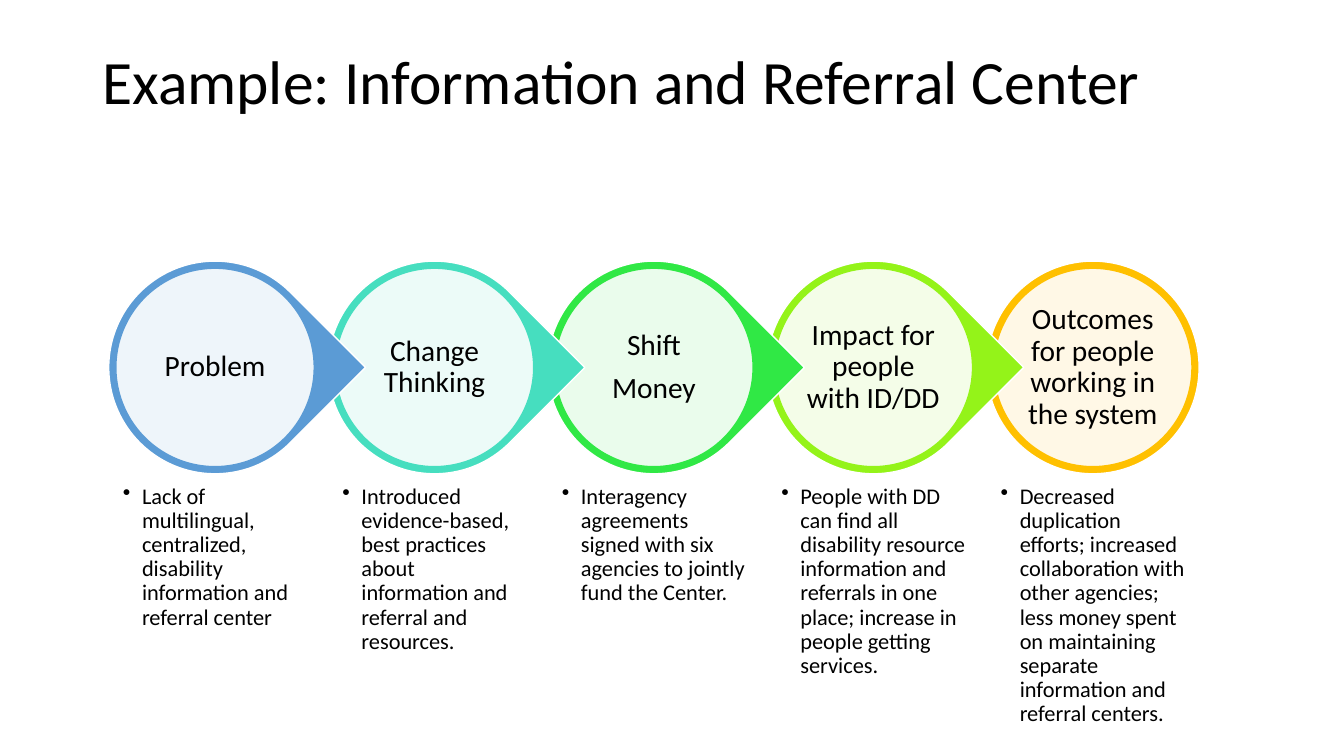
from typing import NamedTuple

from lxml import etree
from pptx import Presentation
from pptx.dml.color import RGBColor
from pptx.enum.shapes import MSO_SHAPE
from pptx.enum.text import MSO_ANCHOR, PP_ALIGN
from pptx.oxml.ns import qn
from pptx.util import Cm, Pt

DROP, OVAL = MSO_SHAPE.TEAR, MSO_SHAPE.OVAL
TOP, MID = MSO_ANCHOR.TOP, MSO_ANCHOR.MIDDLE
LEFT, CENTER = PP_ALIGN.LEFT, PP_ALIGN.CENTER

FONT = "Calibri"
COLORS = {
    "blue": "5B9BD5",
    "teal": "46DEBF",
    "green": "30E845",
    "lime": "94F319",
    "gold": "FFC000",
    "white": "FFFFFF",
    "black": "000000",
}

START, PITCH = 2.74, 5.53
RING_TOP, RING, RIM = 6.58, 5.36, 0.18
DISC = RING - 2 * RIM
LABEL_GAP = 0.89
LABEL = RING - 2 * LABEL_GAP
NOTE_TOP, NOTE_HIGH = 12.04, 2.95


class Box(NamedTuple):
    left: float
    top: float
    width: float
    height: float


class Style(NamedTuple):
    size: float
    anchor: MSO_ANCHOR
    align: PP_ALIGN = LEFT
    inset: float = 0.18
    after: float = 0


class Step(NamedTuple):
    color: str
    label: str
    note: str


TITLE = Style(44, MID, inset=0.25)
HEAD = Style(21, MID, CENTER, 0.07, 7.35)
NOTE = Style(16, TOP, after=2.4)

STEPS = [
    Step("blue", "Problem",
         "Lack of multilingual, centralized, disability information and "
         "referral center"),
    Step("teal", "Change Thinking",
         "Introduced evidence-based, best practices about information and "
         "referral and resources."),
    Step("green", "Shift\nMoney",
         "Interagency agreements signed with six agencies to jointly fund "
         "the Center."),
    Step("lime", "Impact for people with ID/DD",
         "People with DD can find all disability resource information and "
         "referrals in one place; increase in people getting services."),
    Step("gold", "Outcomes for people working in the system",
         "Decreased duplication efforts; increased collaboration with other "
         "agencies; less money spent on maintaining separate information "
         "and referral centers."),
]


def rgb(name: str) -> RGBColor:
    return RGBColor.from_string(COLORS[name])


def add_round(slide, kind: MSO_SHAPE, box: Box, fill: str, line: str):
    shape = slide.shapes.add_shape(kind, *map(Cm, box))
    shape.shadow.inherit = False
    shape.fill.solid()
    shape.fill.fore_color.rgb = rgb(fill)
    shape.line.color.rgb = rgb(line)
    shape.line.width = Pt(1)
    return shape


def fade(shape, percent: int) -> None:
    color = shape.fill._xPr.find(qn("a:solidFill"))[0]
    etree.SubElement(color, qn("a:alpha"), val=str(percent * 1000))


def add_text(slide, box: Box, text: str, style: Style):
    frame = slide.shapes.add_textbox(*map(Cm, box)).text_frame
    frame.word_wrap = True
    frame.vertical_anchor = style.anchor
    frame.margin_left = frame.margin_right = Cm(style.inset)
    frame.margin_top = frame.margin_bottom = Cm(min(style.inset, 0.18))
    frame.text = text
    for para in frame.paragraphs:
        para.alignment = style.align
        para.line_spacing = 0.9
        para.space_after = Pt(style.after)
        para.font.name = FONT
        para.font.size = Pt(style.size)
        para.font.color.rgb = rgb("black")
    return frame


def add_bullet(para) -> None:
    props = para._p.get_or_add_pPr()
    props.set("marL", str(Cm(0.48)))
    props.set("indent", str(-Cm(0.48)))
    bullet = etree.Element(qn("a:buChar"), char="•")
    props.find(qn("a:defRPr")).addprevious(bullet)


def add_step(slide, index: int, step: Step) -> None:
    left = START + index * PITCH
    last = index == len(STEPS) - 1
    ring = add_round(slide, OVAL if last else DROP,
                     Box(left, RING_TOP, RING, RING), step.color, "white")
    ring.rotation = 0 if last else 45
    disc = Box(left + RIM, RING_TOP + RIM, DISC, DISC)
    fade(add_round(slide, OVAL, disc, "white", step.color), 90)
    label = Box(left + LABEL_GAP, RING_TOP + LABEL_GAP, LABEL, LABEL)
    add_text(slide, label, step.label, HEAD)
    note = Box(left + RIM, NOTE_TOP, DISC, NOTE_HIGH)
    add_bullet(add_text(slide, note, step.note, NOTE).paragraphs[0])


def main() -> None:
    deck = Presentation()
    deck.slide_width, deck.slide_height = Cm(33.87), Cm(19.05)
    slide = deck.slides.add_slide(deck.slide_layouts[6])
    add_text(slide, Box(2.33, 1.02, 29.21, 2.2),
             "Example: Information and Referral Center", TITLE)
    for index, step in reversed(list(enumerate(STEPS))):
        add_step(slide, index, step)
    deck.save("out.pptx")


if __name__ == "__main__":
    main()
